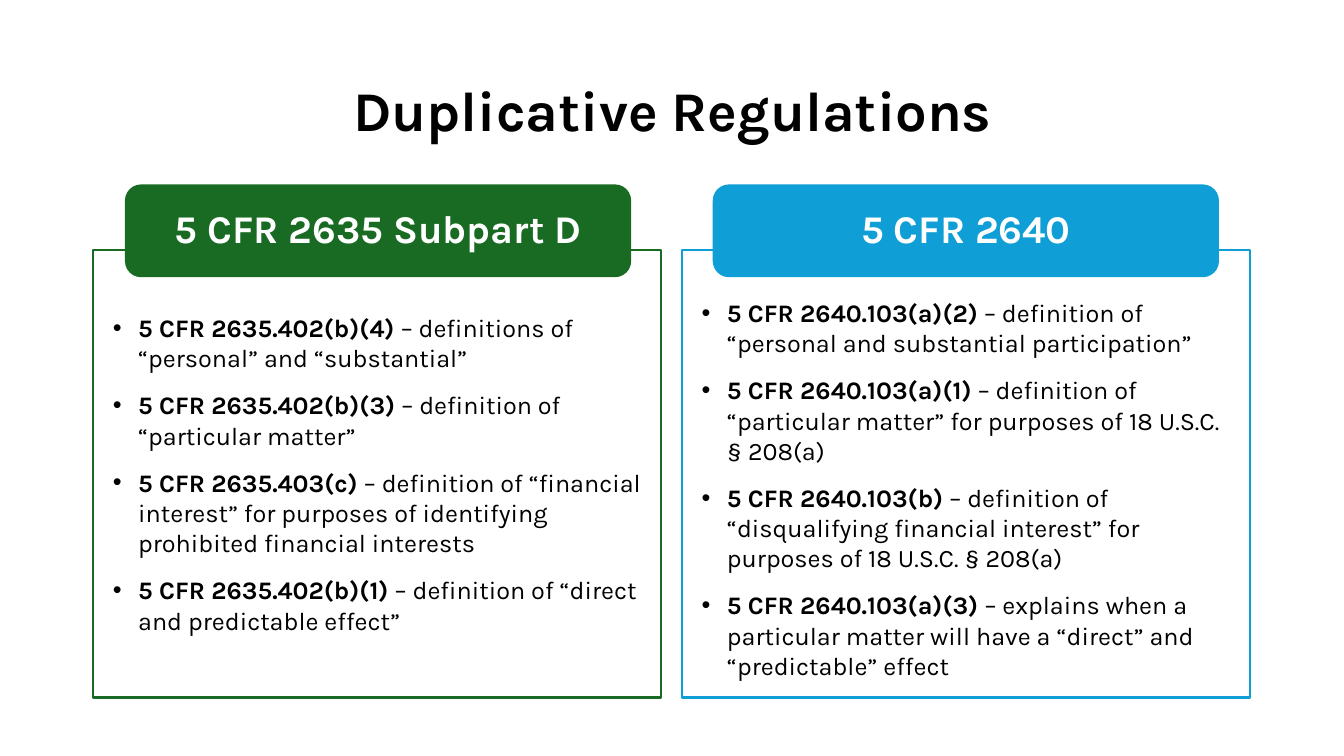
from lxml.etree import SubElement
from pptx import Presentation
from pptx.dml.color import RGBColor
from pptx.enum.shapes import MSO_SHAPE
from pptx.enum.text import MSO_ANCHOR, MSO_AUTO_SIZE, PP_ALIGN
from pptx.oxml.ns import qn
from pptx.util import Inches, Pt


def color(code):
    return RGBColor.from_string(code)


class Deck:
    face = "Karla"
    ink = "000000"

    def __init__(self):
        self.prs = Presentation()
        self.prs.slide_width = Inches(13.33)
        self.prs.slide_height = Inches(7.5)
        self.slide = self.prs.slides.add_slide(self.prs.slide_layouts[3])

    def place(self, shape, left, top, width, height):
        shape.left, shape.top = Inches(left), Inches(top)
        shape.width, shape.height = Inches(width), Inches(height)
        frame = shape.text_frame
        frame.word_wrap = True
        frame.auto_size = MSO_AUTO_SIZE.NONE
        frame.vertical_anchor = MSO_ANCHOR.MIDDLE
        return frame

    def style(self, para, size, code, bold=None):
        font = para.font
        font.name, font.size, font.bold = self.face, Pt(size), bold
        font.color.rgb = color(code)

    def outline(self, shape, code):
        shape.line.color.rgb = color(code)
        shape.line.width = Pt(1.5)

    def label(self, frame, text, size, code):
        para = frame.paragraphs[0]
        para.text = text
        para.alignment = PP_ALIGN.CENTER
        para.line_spacing = 0.9
        para.space_before = Pt(0)
        self.style(para, size, code, True)

    def title(self, text):
        frame = self.place(self.slide.shapes.title, 0.92, 0.4, 11.5, 1.45)
        self.label(frame, text, 40, self.ink)

    def header(self, left, text, code):
        shape = self.slide.shapes.add_shape(MSO_SHAPE.ROUNDED_RECTANGLE, 0, 0, 0, 0)
        shape.shadow.inherit = False
        shape.fill.solid()
        shape.fill.fore_color.rgb = color(code)
        self.outline(shape, code)
        self.label(self.place(shape, left, 1.84, 5, 0.9), text, 28, "FFFFFF")

    def bullet(self, para):
        props = para._p.get_or_add_pPr()
        props.set("marL", str(Inches(0.25)))
        props.set("indent", str(-Inches(0.25)))
        SubElement(props, qn("a:buFont"), typeface="Arial")
        SubElement(props, qn("a:buChar"), char="•")

    def panel(self, slot, left, inset, code, items):
        shape = self.slide.placeholders[slot]
        frame = self.place(shape, left, 2.48, 5.64, 4.44)
        self.outline(shape, code)
        frame.margin_left = frame.margin_right = frame.margin_bottom = Inches(0.2)
        frame.margin_top = Inches(inset)
        for num, (cite, note) in enumerate(items):
            para = frame.add_paragraph() if num else frame.paragraphs[0]
            self.bullet(para)
            para.space_before = Pt(6 if num else 0)
            para.space_after = Pt(6)
            self.style(para, 18, self.ink)
            for text, bold in ((cite, True), (f" – {note}", False)):
                run = para.add_run()
                run.text = text
                run.font.bold = bold


def main():
    deck = Deck()
    deck.title("Duplicative Regulations")
    sides = [
        ("5 CFR 2635 Subpart D", "196B24", 0.92, 1.25, 0.2, [
            ("5 CFR 2635.402(b)(4)", "definitions of “personal” and “substantial”"),
            ("5 CFR 2635.402(b)(3)", "definition of “particular matter”"),
            ("5 CFR 2635.403(c)", "definition of “financial interest” for purposes of "
             "identifying prohibited financial interests"),
            ("5 CFR 2635.402(b)(1)", "definition of “direct and predictable effect”"),
        ]),
        ("5 CFR 2640", "0F9ED5", 6.76, 7.08, 0.5, [
            ("5 CFR 2640.103(a)(2)", "definition of “personal and substantial participation”"),
            ("5 CFR 2640.103(a)(1)", "definition of “particular matter” for purposes of "
             "18 U.S.C. § 208(a)"),
            ("5 CFR 2640.103(b)", "definition of “disqualifying financial interest” for "
             "purposes of 18 U.S.C. § 208(a)"),
            ("5 CFR 2640.103(a)(3)", "explains when a particular matter will have a "
             "“direct” and “predictable” effect"),
        ]),
    ]
    for slot, (head, code, left, tab, inset, items) in enumerate(sides, 1):
        deck.panel(slot, left, inset, code, items)
        deck.header(tab, head, code)
    deck.prs.save("out.pptx")


if __name__ == "__main__":
    main()
